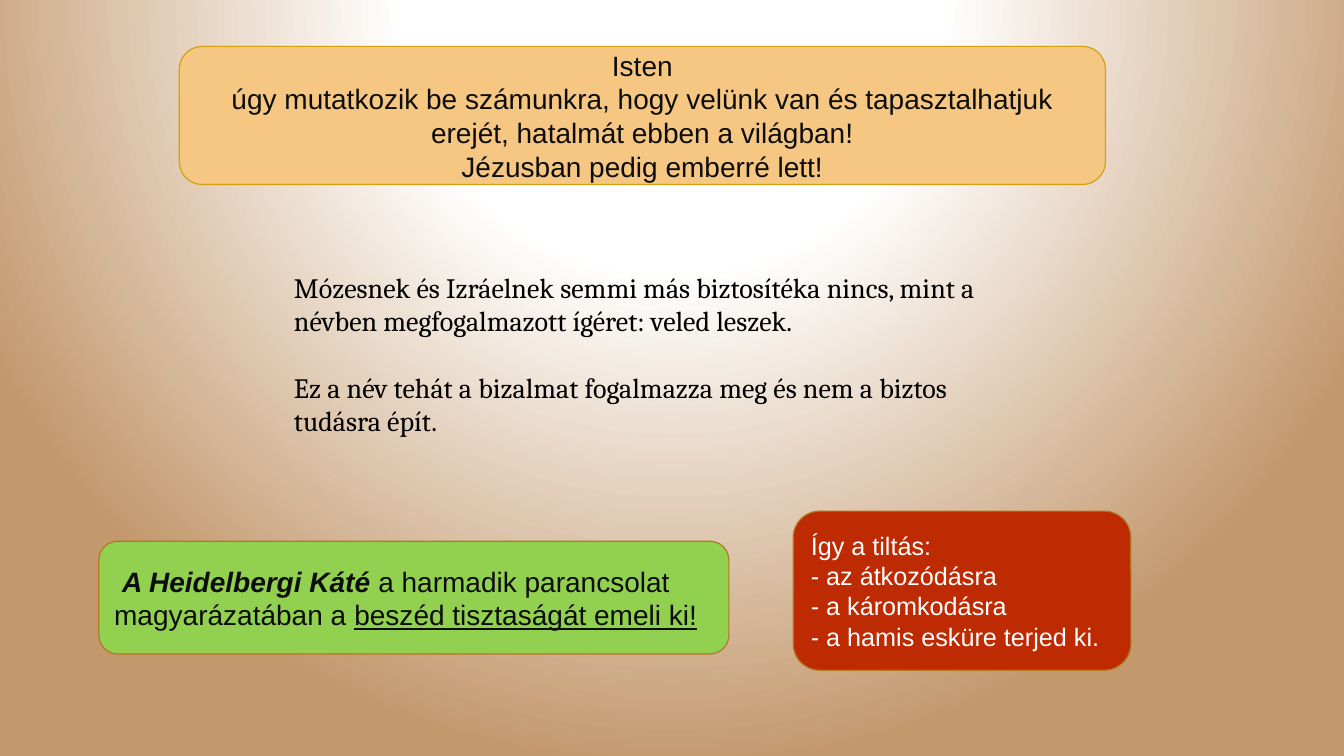
"""Builds a slide on the promise in God's name and the misuse of it."""
from dataclasses import dataclass

from lxml import etree
from pptx import Presentation
from pptx import util as u
from pptx.dml.color import RGBColor
from pptx.enum import shapes, text
from pptx.oxml import ns


@dataclass(frozen=True)
class Theme:
    sans: str = "Arial"
    serif: str = "Cambria"
    large: int = 20
    small: int = 18
    dark: str = "0D0D0D"
    black: str = "000000"
    white: str = "FFFFFF"
    green: str = "92D050"
    amber: str = "F6C782"
    red: str = "BE2A02"
    gold: str = "D2A010"
    brown: str = "B27822"
    backdrop: tuple = ((0, "FFFFFF"), (35, "FFFFFF"), (100, "C3986D"))
    edge: float = 0.85


THEME = Theme()
SLIDE_SIZE = (33.87, 19.05)

CATECHISM = [[
    ("A Heidelbergi Káté ", "bi"),
    ("a harmadik parancsolat magyarázatában a ", ""),
    ("beszéd tisztaságát emeli ki!", "u"),
]]
REVELATION = [
    "Isten",
    "úgy mutatkozik be számunkra, hogy velünk van és tapasztalhatjuk "
    "erejét, hatalmát ebben a világban!",
    "Jézusban pedig emberré lett!",
]
PROMISE = [
    "Mózesnek és Izráelnek semmi más biztosítéka nincs, mint a névben "
    "megfogalmazott ígéret: veled leszek.",
    "Ez a név tehát a bizalmat fogalmazza meg és nem a biztos tudásra épít.",
]
PROHIBITION = [
    "Így a tiltás:",
    "- az átkozódásra",
    "- a káromkodásra",
    "- a hamis esküre terjed ki.",
]

PANELS = [
    dict(box=(2.49, 13.64, 15.88, 2.84), lines=CATECHISM, fill=THEME.green,
         edge=THEME.brown, color=THEME.dark, size=THEME.large, indent=0.2),
    dict(box=(4.52, 1.17, 23.34, 3.48), lines=REVELATION, fill=THEME.amber,
         edge=THEME.gold, color=THEME.dark, size=THEME.large,
         align=text.PP_ALIGN.CENTER),
    dict(box=(19.99, 12.88, 8.51, 4.01), lines=PROHIBITION, fill=THEME.red,
         edge=THEME.brown, color=THEME.white, size=THEME.small),
]
PROMISE_BOX = (7.16, 6.68, 17.81, 5.38)
PROMISE_GAP = 23.5


def rgb(value):
    return RGBColor.from_string(value)


def paint_backdrop(slide):
    slide.background.fill.gradient()
    grad = slide.element.find(".//" + ns.qn("a:gradFill"))
    for child in list(grad):
        grad.remove(child)
    stops = etree.SubElement(grad, ns.qn("a:gsLst"))
    for percent, color in THEME.backdrop:
        stop = etree.SubElement(stops, ns.qn("a:gs"), pos=str(percent * 1000))
        etree.SubElement(stop, ns.qn("a:srgbClr"), val=color)
    circle = etree.SubElement(grad, ns.qn("a:path"), path="circle")
    etree.SubElement(circle, ns.qn("a:fillToRect"),
                     l="50000", t="-80000", r="50000", b="180000")


def write(tf, lines, font, size, color, align=text.PP_ALIGN.LEFT, gap=0, indent=0):
    tf.word_wrap = True
    for i, line in enumerate(lines):
        p = tf.add_paragraph() if i else tf.paragraphs[0]
        p.alignment = align
        p.font.name, p.font.size = font, u.Pt(size)
        p.font.color.rgb = rgb(color)
        if i and gap:
            p.space_before = u.Pt(gap)
        if indent:
            p._p.get_or_add_pPr().set("indent", str(u.Cm(indent)))
        for words, style in [(line, "")] if isinstance(line, str) else line:
            r = p.add_run()
            r.text = words
            if "b" in style:
                r.font.bold = True
            if "i" in style:
                r.font.italic = True
            if "u" in style:
                r.font.underline = True


def add_panel(slide, box, lines, fill, edge, color, size, **layout):
    sp = slide.shapes.add_shape(shapes.MSO_SHAPE.ROUNDED_RECTANGLE, *map(u.Cm, box))
    sp.shadow.inherit = False
    sp.fill.solid()
    sp.fill.fore_color.rgb = rgb(fill)
    sp.line.color.rgb = rgb(edge)
    sp.line.width = u.Pt(THEME.edge)
    sp.text_frame.vertical_anchor = text.MSO_ANCHOR.MIDDLE
    write(sp.text_frame, lines, THEME.sans, size, color, **layout)


def main():
    prs = Presentation()
    prs.slide_width, prs.slide_height = map(u.Cm, SLIDE_SIZE)
    slide = prs.slides.add_slide(prs.slide_layouts.get_by_name("Blank"))
    paint_backdrop(slide)
    for panel in PANELS:
        add_panel(slide, **panel)
    tb = slide.shapes.add_textbox(*map(u.Cm, PROMISE_BOX))
    write(tb.text_frame, PROMISE, THEME.serif, THEME.large, THEME.black,
          gap=PROMISE_GAP)
    prs.save("out.pptx")


if __name__ == "__main__":
    main()
